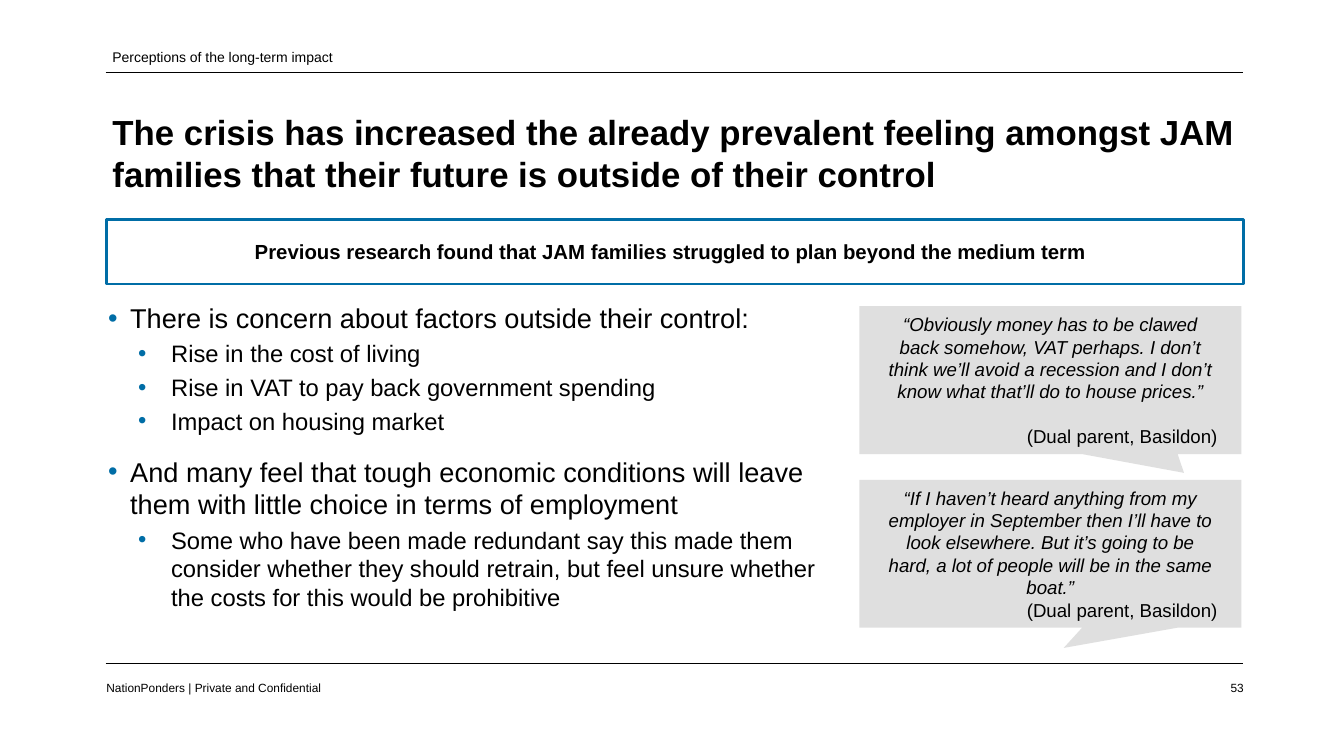
from lxml.etree import SubElement
from pptx import Presentation
from pptx.dml.color import RGBColor
from pptx.enum.shapes import MSO_CONNECTOR, MSO_SHAPE
from pptx.enum.text import MSO_ANCHOR, MSO_AUTO_SIZE, PP_ALIGN
from pptx.oxml.ns import qn
from pptx.util import Inches, Pt

BLACK = RGBColor(0x00, 0x00, 0x00)
BLUE = RGBColor(0x00, 0x6D, 0xA6)
GREY = RGBColor(0xDF, 0xDF, 0xDF)


def place(shape, left, top, width, height):
    shape.left, shape.top = Inches(left), Inches(top)
    shape.width, shape.height = Inches(width), Inches(height)


def write(para, text, size, align=PP_ALIGN.LEFT, bold=False, italic=False):
    para.text = text
    para.alignment = align
    para.font.name = "Arial"
    para.font.size = Pt(size)
    para.font.bold = bold
    para.font.italic = italic
    para.font.color.rgb = BLACK


deck = Presentation()
deck.slide_width, deck.slide_height = Inches(21.99), Inches(12.37)
page = deck.slides.add_slide(deck.slide_layouts[1])

for y in (1.18, 10.85):
    rule = page.shapes.add_connector(
        MSO_CONNECTOR.STRAIGHT, Inches(1.73), Inches(y), Inches(20.33), Inches(y))
    rule.line.color.rgb = BLACK
    rule.line.width = Pt(0.75)
    SubElement(rule._element.spPr, qn("a:effectLst"))

title = page.shapes.title
place(title, 1.74, 1.73, 18.61, 1.54)
title.text_frame.auto_size = MSO_AUTO_SIZE.NONE
title.text_frame.vertical_anchor = MSO_ANCHOR.MIDDLE
write(title.text_frame.paragraphs[0],
      "The crisis has increased the already prevalent feeling amongst JAM "
      "families that their future is outside of their control", 41, bold=True)

points = [
    (0, "There is concern about factors outside their control:"),
    (1, "Rise in the cost of living"),
    (1, "Rise in VAT to pay back government spending"),
    (1, "Impact on housing market"),
    (0, "And many feel that tough economic conditions will leave them with "
        "little choice in terms of employment"),
    (1, "Some who have been made redundant say this made them consider whether "
        "they should retrain, but feel unsure whether the costs for this would "
        "be prohibitive"),
]
level_styles = [(32, 18, 0.36, -0.36), (28, 0, 1.03, -0.54)]
body = page.placeholders[1]
place(body, 1.67, 4.88, 12.08, 6.29)
frame = body.text_frame
frame.auto_size = MSO_AUTO_SIZE.NONE
for index, (level, text) in enumerate(points):
    para = frame.add_paragraph() if index else frame.paragraphs[0]
    size, before, margin, indent = level_styles[level]
    para.level = level
    para.space_before, para.space_after = Pt(before), Pt(6)
    properties = para._p.get_or_add_pPr()
    properties.set("marL", str(Inches(margin)))
    properties.set("indent", str(Inches(indent)))
    bullet_color = SubElement(properties, qn("a:buClr"))
    SubElement(bullet_color, qn("a:srgbClr"), val=str(BLUE))
    SubElement(properties, qn("a:buFont"), typeface="Arial")
    SubElement(properties, qn("a:buChar"), char="•")
    write(para, text, size)

quotes = [
    (5.01, 0.35, 0.627, 26,
     "“Obviously money has to be clawed back somehow, VAT perhaps. I don’t think "
     "we’ll avoid a recession and I don’t know what that’ll do to house prices.”"),
    (7.85, 0.035, 0.637, 0,
     "“If I haven’t heard anything from my employer in September then I’ll have "
     "to look elsewhere. But it’s going to be hard, a lot of people will be in "
     "the same boat.”"),
]
for top, tip_x, tip_y, gap, text in quotes:
    callout = page.shapes.add_shape(
        MSO_SHAPE.RECTANGULAR_CALLOUT, Inches(14.06), Inches(top), Inches(6.25), Inches(2.42))
    callout.adjustments[0], callout.adjustments[1] = tip_x, tip_y
    callout.shadow.inherit = False
    callout.fill.solid()
    callout.fill.fore_color.rgb = GREY
    callout.line.fill.background()
    frame = callout.text_frame
    frame.word_wrap = True
    frame.vertical_anchor = MSO_ANCHOR.MIDDLE
    frame.margin_left = frame.margin_right = Inches(0.39)
    frame.margin_top = frame.margin_bottom = Inches(0.39)
    write(frame.paragraphs[0], text, 22, PP_ALIGN.CENTER, italic=True)
    speaker = frame.add_paragraph()
    speaker.space_before = Pt(gap)
    write(speaker, "(Dual parent, Basildon)", 22, PP_ALIGN.RIGHT)

banner = page.shapes.add_shape(
    MSO_SHAPE.RECTANGLE, Inches(1.74), Inches(3.59), Inches(18.61), Inches(1.06))
banner.shadow.inherit = False
banner.fill.background()
banner.line.color.rgb = BLUE
banner.line.width = Pt(3)
frame = banner.text_frame
frame.word_wrap = True
frame.vertical_anchor = MSO_ANCHOR.MIDDLE
frame.margin_left = frame.margin_top = frame.margin_bottom = Inches(0.2)
frame.margin_right = Inches(0.36)
write(frame.paragraphs[0],
      "Previous research found that JAM families struggled to plan beyond the medium term",
      24, PP_ALIGN.CENTER, bold=True)

labels = [
    (1.74, 0.77, 10.33, 0.1, 16.5, PP_ALIGN.LEFT, MSO_ANCHOR.MIDDLE,
     "Perceptions of the long-term impact"),
    (1.74, 11.13, 4.51, 0, 14, PP_ALIGN.LEFT, MSO_ANCHOR.TOP,
     "NationPonders | Private and Confidential"),
    (19.74, 11.13, 0.61, 0, 14, PP_ALIGN.RIGHT, MSO_ANCHOR.TOP, "53"),
]
for left, top, width, inset, size, align, anchor, text in labels:
    box = page.shapes.add_textbox(Inches(left), Inches(top), Inches(width), Inches(0.33))
    frame = box.text_frame
    frame.word_wrap = True
    frame.vertical_anchor = anchor
    frame.margin_left = frame.margin_right = Inches(inset)
    frame.margin_top = frame.margin_bottom = 0
    write(frame.paragraphs[0], text, size, align)

deck.save("out.pptx")
